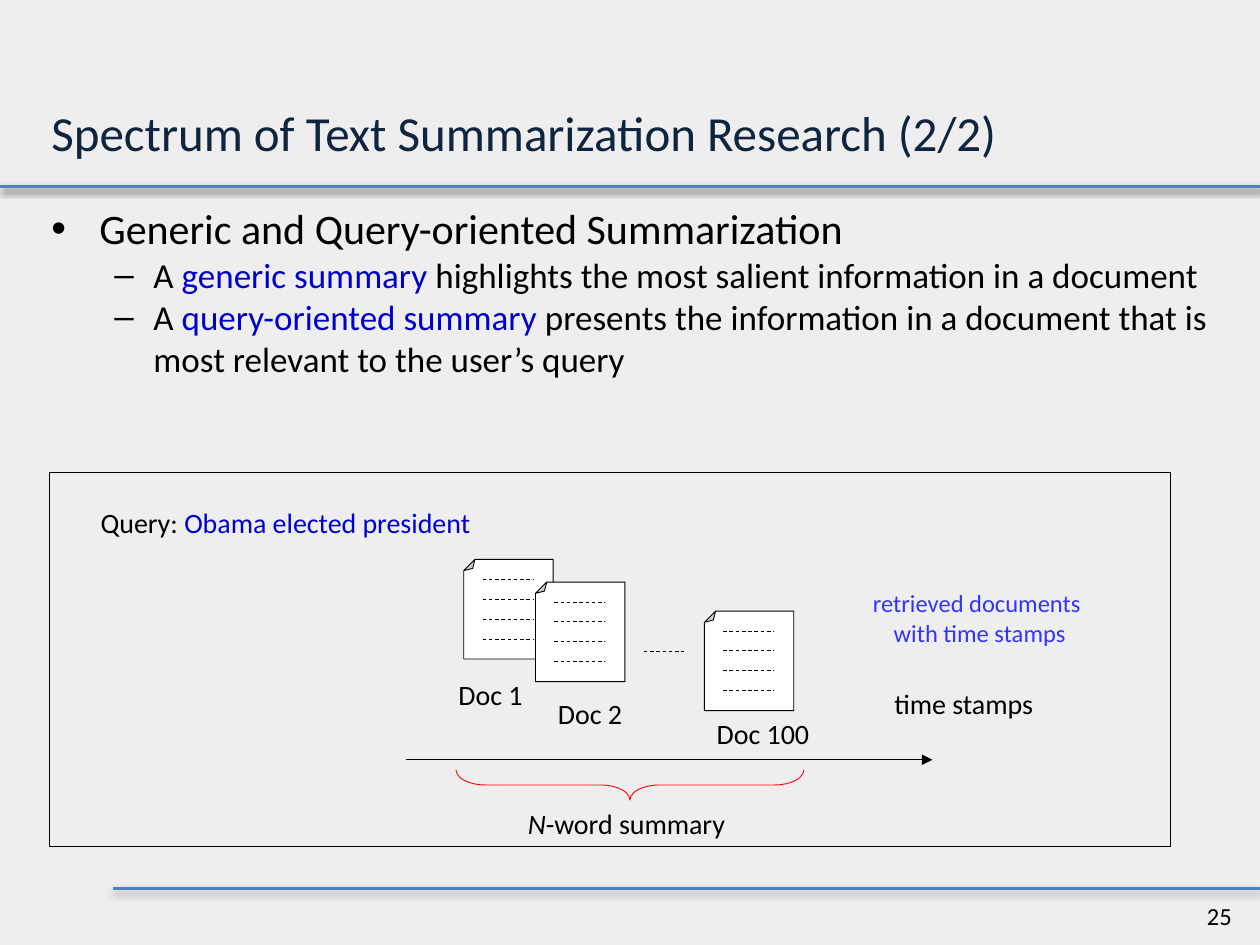
from dataclasses import dataclass

import pptx
import pptx.dml.color
import pptx.enum.dml
import pptx.enum.shapes
import pptx.enum.text
import pptx.oxml
import pptx.oxml.ns
import pptx.util

Inches = pptx.util.Inches
Shape = pptx.enum.shapes.MSO_SHAPE
Align = pptx.enum.text.PP_ALIGN
Anchor = pptx.enum.text.MSO_ANCHOR

BLACK, BLUE, BRIGHT_BLUE = "000000", "0000CC", "3333FF"
NAVY, RULE_BLUE, RED = "0F243E", "4F81BD", "FF0000"
WHITE, BACKGROUND = "FFFFFF", "EEEEEE"
RULE_SHADOW = (
    '<a:outerShdw blurRad="50800" dist="25400" dir="5400000" rotWithShape="0">'
    '<a:srgbClr val="000000"><a:alpha val="43000"/></a:srgbClr></a:outerShdw>'
)


@dataclass
class Span:
    text: str
    color: str = BLACK
    italic: bool = False


@dataclass
class Line:
    spans: list[Span]
    size: float = 16
    bullet: str = ""
    margin: float = 0
    hanging: float = 0


@dataclass
class Label:
    left: float
    top: float
    width: float
    height: float
    lines: list[Line]
    align: Align = Align.LEFT
    anchor: Anchor = Anchor.TOP


@dataclass
class Document:
    left: float
    top: float
    width: float = 0.71
    height: float = 0.79


def rgb(color: str) -> pptx.dml.color.RGBColor:
    return pptx.dml.color.RGBColor.from_string(color)


def xml_part(tag: str, attributes: str = "", content: str = ""):
    namespace = pptx.oxml.ns.nsdecls("a")
    return pptx.oxml.parse_xml(f"<a:{tag} {namespace} {attributes}>{content}</a:{tag}>")


def add_label(page, label: Label) -> None:
    box = page.shapes.add_textbox(
        Inches(label.left), Inches(label.top), Inches(label.width), Inches(label.height)
    )
    frame = box.text_frame
    frame.word_wrap = True
    frame.vertical_anchor = label.anchor
    for index, line in enumerate(label.lines):
        para = frame.add_paragraph() if index else frame.paragraphs[0]
        para.alignment = label.align
        if line.bullet:
            properties = para._p.get_or_add_pPr()
            properties.set("marL", str(Inches(line.margin)))
            properties.set("indent", str(-Inches(line.hanging)))
            properties.append(xml_part("buFont", 'typeface="Arial"'))
            properties.append(xml_part("buChar", f'char="{line.bullet}"'))
        for span in line.spans:
            run = para.add_run()
            run.text = span.text
            formats = {
                "name": "Calibri",
                "size": pptx.util.Pt(line.size),
                "italic": span.italic,
            }
            for name, value in formats.items():
                setattr(run.font, name, value)
            run.font.color.rgb = rgb(span.color)


def add_line(page, left: float, right: float, y: float, color: str = BLACK,
             width: float = 0.5, dashed: bool = False, arrow: bool = False,
             shadow: str = "") -> None:
    connector = page.shapes.add_connector(
        pptx.enum.shapes.MSO_CONNECTOR.STRAIGHT,
        Inches(left), Inches(y), Inches(right), Inches(y),
    )
    connector.line.color.rgb = rgb(color)
    connector.line.width = pptx.util.Pt(width)
    if dashed:
        connector.line.dash_style = pptx.enum.dml.MSO_LINE.DASH
    if arrow:
        connector.line._get_or_add_ln().append(xml_part("tailEnd", 'type="triangle"'))
    connector._element.spPr.append(xml_part("effectLst", content=shadow))


def add_outline(page, kind: Shape, left: float, top: float, width: float, height: float,
                color: str = BLACK, fill: str = "", rotation: float = 0,
                guides: dict[str, int] | None = None) -> None:
    shape = page.shapes.add_shape(
        kind, Inches(left), Inches(top), Inches(width), Inches(height)
    )
    shape.shadow.inherit = False
    shape.rotation = rotation
    if guides:
        geometry = shape._element.spPr.find(pptx.oxml.ns.qn("a:prstGeom"))
        for child in list(geometry):
            geometry.remove(child)
        content = "".join(f'<a:gd name="{name}" fmla="val {value}"/>'
                          for name, value in guides.items())
        geometry.append(xml_part("avLst", content=content))
    if fill:
        shape.fill.solid()
        shape.fill.fore_color.rgb = rgb(fill)
    else:
        shape.fill.background()
    shape.line.color.rgb = rgb(color)
    shape.line.width = pptx.util.Pt(0.5)


def add_document(page, document: Document) -> None:
    add_outline(page, Shape.FOLDED_CORNER, document.left, document.top, document.width,
                document.height, fill=WHITE, rotation=180, guides={"adj": 12500})
    start = document.left + 0.15
    for row in range(1, 5):
        add_line(page, start, start + 0.4, document.top + row * document.height / 5,
                 dashed=True)


def main() -> None:
    deck = pptx.Presentation()
    deck.slide_width, deck.slide_height = Inches(10), Inches(7.5)
    page = deck.slides.add_slide(deck.slide_layouts[6])
    page.background.fill.solid()
    page.background.fill.fore_color.rgb = rgb(BACKGROUND)

    for left, y in ((0.9, 7.05), (0, 1.48)):
        add_line(page, left, 10, y, RULE_BLUE, 2, shadow=RULE_SHADOW)

    sub_bullet = {"size": 20, "bullet": "–", "margin": 0.81, "hanging": 0.31}
    headings = [
        Label(9.48, 7.1, 0.45, 0.34, [Line([Span("25")], 14)]),
        Label(0.31, 1.56, 9.38, 5.23, [
            Line([Span("Generic and Query-oriented Summarization")], 24, "•", 0.38, 0.38),
            Line([Span("A "), Span("generic summary ", BLUE),
                  Span("highlights the most salient information in a document")],
                 **sub_bullet),
            Line([Span("A "), Span("query-oriented summary ", BLUE),
                  Span("presents the information in a document that is "
                       "most relevant to the user’s query")], **sub_bullet),
        ]),
        Label(0.31, 0.16, 9.38, 1.17,
              [Line([Span("Spectrum of Text Summarization Research (2/2)", NAVY)], 28)],
              anchor=Anchor.BOTTOM),
    ]
    for label in headings:
        add_label(page, label)

    for document in (Document(3.68, 4.44), Document(4.25, 4.62), Document(5.59, 4.85)):
        add_document(page, document)
    add_line(page, 5.11, 5.43, 5.17, dashed=True)
    add_line(page, 3.22, 7.4, 6.03, arrow=True)
    add_outline(page, Shape.LEFT_BRACE, 4.88, 4.85, 0.24, 2.76, RED,
                rotation=270, guides={"adj1": 97200, "adj2": 50000})

    diagram_labels = [
        Label(7, 5.4, 1.4, 0.37, [Line([Span("time stamps")])]),
        Label(3.54, 5.33, 0.78, 0.37, [Line([Span("Doc 1")])]),
        Label(4.33, 5.48, 0.78, 0.37, [Line([Span("Doc 2")])]),
        Label(5.59, 5.64, 1.03, 0.37, [Line([Span("Doc 100")])]),
        Label(4.09, 6.35, 1.89, 0.37,
              [Line([Span("N", italic=True), Span("-word summary")])]),
        Label(0.7, 3.96, 3.48, 0.37,
              [Line([Span("Query: "), Span("Obama elected president", BLUE)])]),
        Label(6.77, 4.62, 2.01, 0.61,
              [Line([Span("retrieved documents ", BRIGHT_BLUE)], 14),
               Line([Span("with time stamps", BRIGHT_BLUE)], 14)], Align.CENTER),
    ]
    for label in diagram_labels:
        add_label(page, label)
    add_outline(page, Shape.RECTANGLE, 0.39, 3.75, 8.9, 2.97)

    deck.save("out.pptx")


if __name__ == "__main__":
    main()
